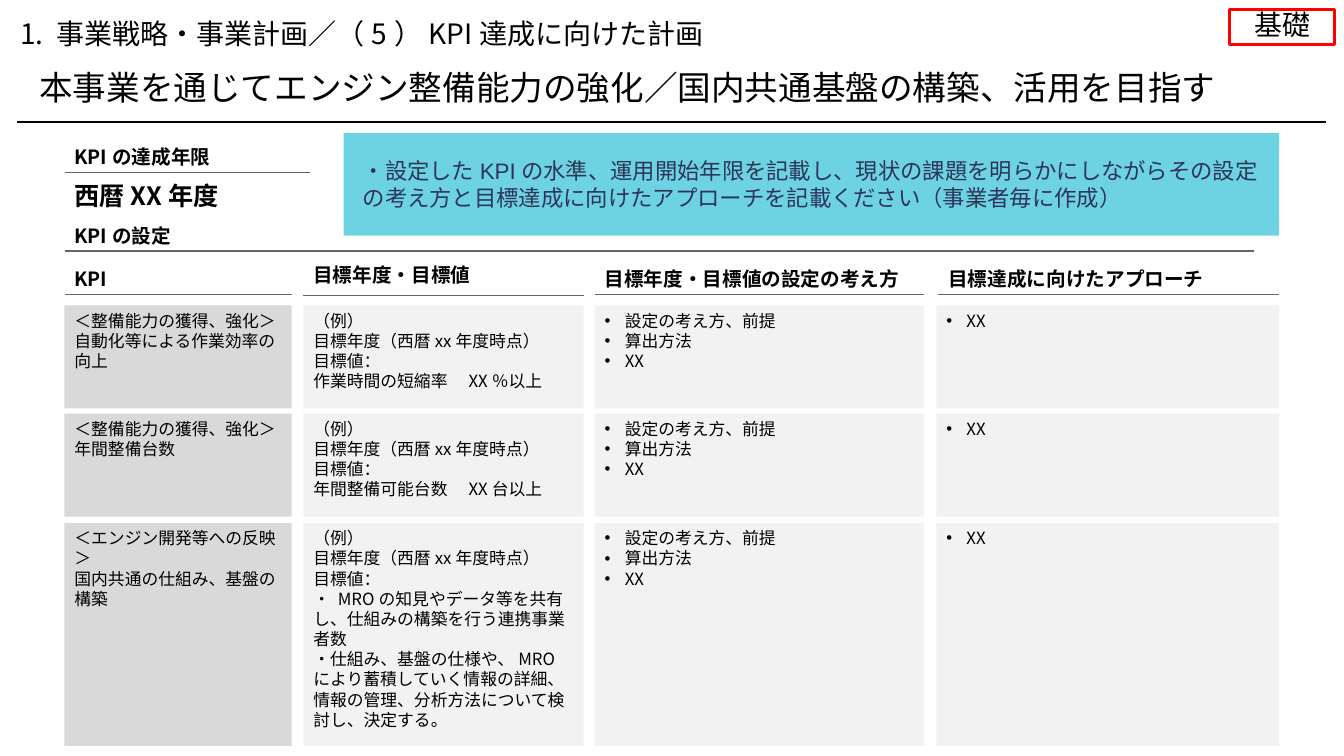
from pptx import Presentation
from pptx.dml.color import RGBColor
from pptx.enum import shapes, text
from pptx.oxml import ns, xmlchemy
from pptx.util import Pt

HEX = {"ink": "000000", "paper": "FFFFFF", "rule": "666666", "frame": "FF0000",
       "banner": "30C1D7", "navy": "2E3558", "key": "D9D9D9", "cell": "F2F2F2"}
SANS = "Noto Sans CJK JP"
TOP, MID = text.MSO_ANCHOR.TOP, text.MSO_ANCHOR.MIDDLE
LEFT, MID_X = text.PP_ALIGN.LEFT, text.PP_ALIGN.CENTER
INSET = (7.2, 3.6, 7.2, 3.6)

# left, width, heading, heading box (left, top, width, height), rule width
COLS = [
    (46.1, 162.2, "KPI", (46.1, 187.9, 162.2, 22.3), 162.2),
    (216.7, 200.2, "目標年度・目標値", (216.7, 181.4, 190.1, 29.5), 200.2),
    (424.8, 235.4, "目標年度・目標値の設定の考え方", (424.8, 187.9, 235.4, 22.3), 235.4),
    (668.9, 244.8, "目標達成に向けたアプローチ", (670.3, 187.9, 243.4, 22.3), 243.4),
]
GOAL = ["（例）", "目標年度（西暦xx年度時点）", "目標値："]
BASIS = ["設定の考え方、前提", "算出方法", "XX"]
PLAN = ["XX"]
# top, height, KPI, targets
ROWS = [
    (218.2, 73.6, ["＜整備能力の獲得、強化＞", "自動化等による作業効率の向上"],
     ["作業時間の短縮率　XX％以上"]),
    (295.4, 73.6, ["＜整備能力の獲得、強化＞", "年間整備台数"],
     ["年間整備可能台数　XX台以上"]),
    (373.6, 159.2, ["＜エンジン開発等への反映＞", "国内共通の仕組み、基盤の構築"],
     ["・ MROの知見やデータ等を共有し、仕組みの構築を行う連携事業者数",
      "・仕組み、基盤の仕様や、MROにより蓄積していく情報の詳細、"
      "情報の管理、分析方法について検討し、決定する。"]),
]


def color(name):
    return RGBColor.from_string(HEX[name])


def add(parent, tag, **attrs):
    node = xmlchemy.OxmlElement(tag)
    for key, val in attrs.items():
        node.set(key, val)
    parent.append(node)
    return node


def write(shape, lines, size, bold=False, face=SANS, ink="ink", anchor=TOP,
          inset=INSET, align=LEFT, space=None, bullet=False, indent=0):
    """Fill a shape with one paragraph per line, all in one style."""
    frame = shape.text_frame
    frame.word_wrap = True
    frame.vertical_anchor = anchor
    (frame.margin_left, frame.margin_top,
     frame.margin_right, frame.margin_bottom) = map(Pt, inset)
    for i, line in enumerate(lines):
        para = frame.paragraphs[0] if i == 0 else frame.add_paragraph()
        para.text = line
        para.alignment = align
        if space:
            para.line_spacing = space
        props = para._p.get_or_add_pPr()
        if bullet:
            props.set("marL", str(Pt(14.4)))
            props.set("indent", str(-Pt(14.4)))
            add(props, "a:buFont", typeface="Arial")
            add(props, "a:buChar", char="•")
        elif indent:
            props.set("marL", str(Pt(indent)))
        font = para.font
        font.size, font.bold, font.name = Pt(size), bold, face
        font.color.rgb = color(ink)
        add(props.find(ns.qn("a:defRPr")), "a:ea", typeface=face)


def block(slide, box, fill=None):
    rect = slide.shapes.add_shape(shapes.MSO_SHAPE.RECTANGLE, *map(Pt, box))
    rect.shadow.inherit = False
    rect.line.fill.background()
    if fill:
        rect.fill.solid()
        rect.fill.fore_color.rgb = color(fill)
    else:
        rect.fill.background()
    return rect


def rule(slide, left, top, width, ink="rule", weight=0.75):
    line = slide.shapes.add_connector(
        shapes.MSO_CONNECTOR.STRAIGHT, Pt(left), Pt(top), Pt(left + width), Pt(top))
    line.line.color.rgb = color(ink)
    line.line.width = Pt(weight)
    add(line._element.spPr, "a:effectLst")


def label(slide, box, words, width=None):
    """Bold heading with a rule under it."""
    left, top, wide, high = box
    write(block(slide, box, "paper"), [words], 14, bold=True, anchor=MID)
    rule(slide, left, top + high, width or wide)


def title(slide, box, words, size):
    area = slide.shapes.add_textbox(*map(Pt, box))
    write(area, [words], size, inset=(0, 0, 0, 0), space=0.9)
    area.text_frame.auto_size = text.MSO_AUTO_SIZE.SHAPE_TO_FIT_TEXT


def tag(slide, box):
    rect = block(slide, box)
    rect.line.color.rgb = color("frame")
    rect.line.width = Pt(2.25)
    write(rect, ["基礎"], 20, anchor=MID, inset=(0, 0, 0, 0), align=MID_X, space=0.9)


def banner(slide, box):
    rect = block(slide, box, "banner")
    tint = rect._element.spPr.find(ns.qn("a:solidFill"))[0]
    add(tint, "a:alpha", val="70000")
    write(rect, ["・設定したKPIの水準、運用開始年限を記載し、現状の課題を明らかにしながら"
                 "その設定の考え方と目標達成に向けたアプローチを記載ください（事業者毎に作成）"],
          16, face="Arial", ink="navy", anchor=MID, indent=6.5)


def head(slide):
    title(slide, (14.4, 14.4, 861, 21.6), "1. 事業戦略・事業計画／（5）KPI達成に向けた計画", 20)
    title(slide, (28.1, 51.1, 885.6, 25.9),
          "本事業を通じてエンジン整備能力の強化／国内共通基盤の構築、活用を目指す", 24)
    rule(slide, 12.2, 87.1, 935.3, "ink", 1)
    tag(slide, (878.4, 6.5, 74.9, 25.2))


def goals(slide):
    year = block(slide, (46.1, 125.3, 271.4, 32.4), "paper")
    write(year, ["西暦XX年度"], 18, bold=True, anchor=MID, inset=(7.2, 0, 7.2, 3.6))
    label(slide, (46.1, 100.8, 175, 22.3), "KPIの達成年限")
    label(slide, (46.1, 157, 849.6, 22.3), "KPIの設定")
    banner(slide, (245.5, 95, 668.2, 73.4))


def grid(slide):
    for _, _, words, box, width in COLS:
        label(slide, box, words, width)
    for top, high, kpi, goal in ROWS:
        for i, lines in enumerate([kpi, GOAL + goal, BASIS, PLAN]):
            left, width = COLS[i][:2]
            cell = block(slide, (left, top, width, high), "cell" if i else "key")
            write(cell, lines, 12, bullet=i > 1)


def main():
    deck = Presentation()
    deck.slide_width, deck.slide_height = Pt(960), Pt(540)
    slide = deck.slides.add_slide(deck.slide_layouts[6])
    head(slide)
    goals(slide)
    grid(slide)
    deck.save("out.pptx")


if __name__ == "__main__":
    main()
